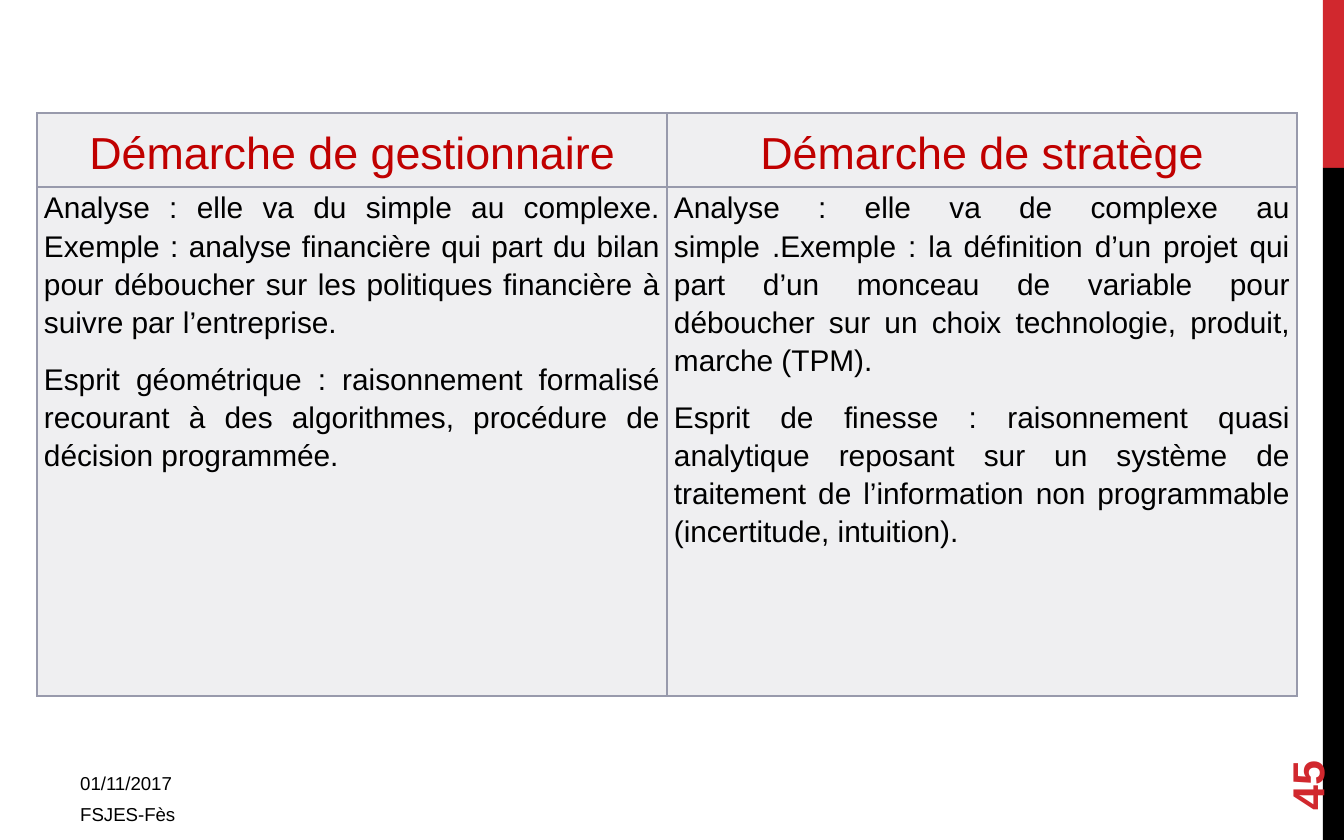
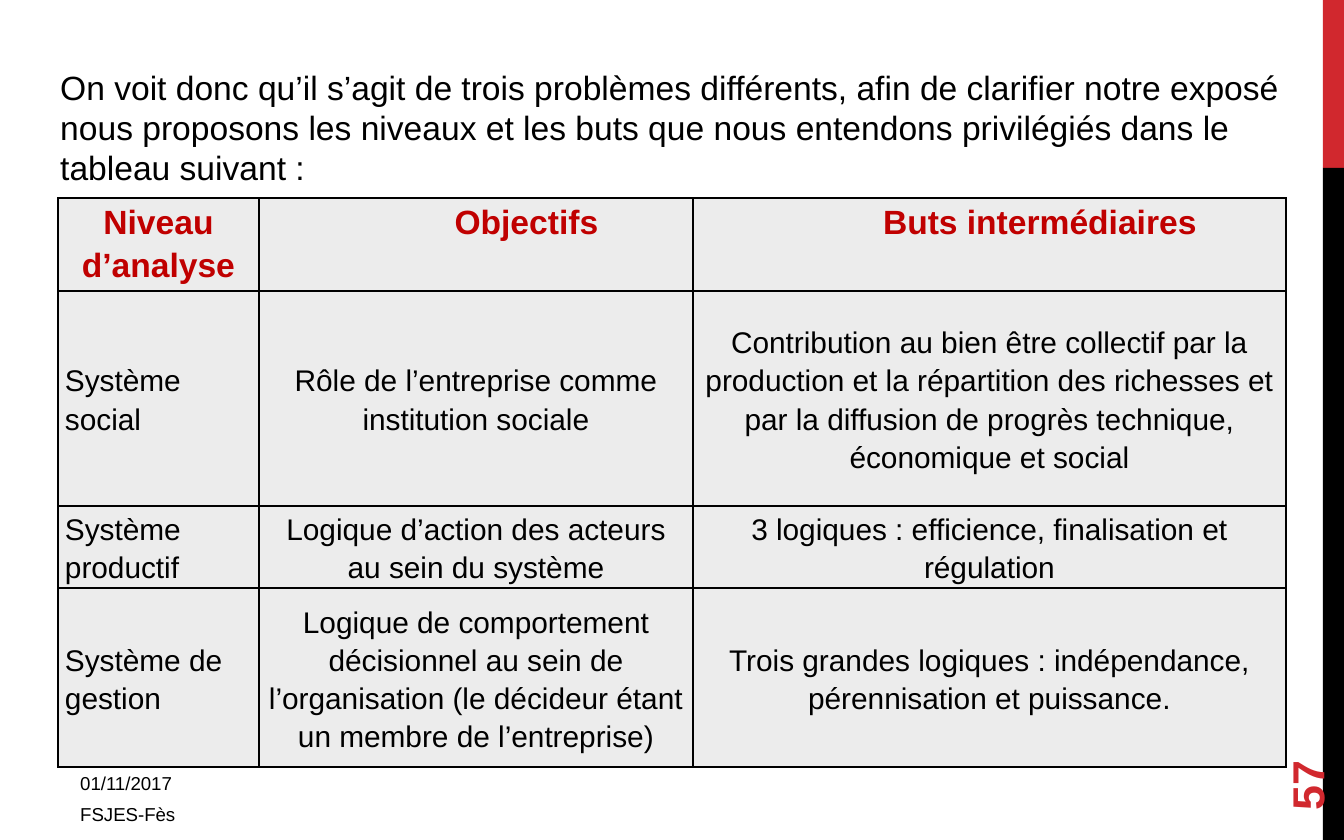
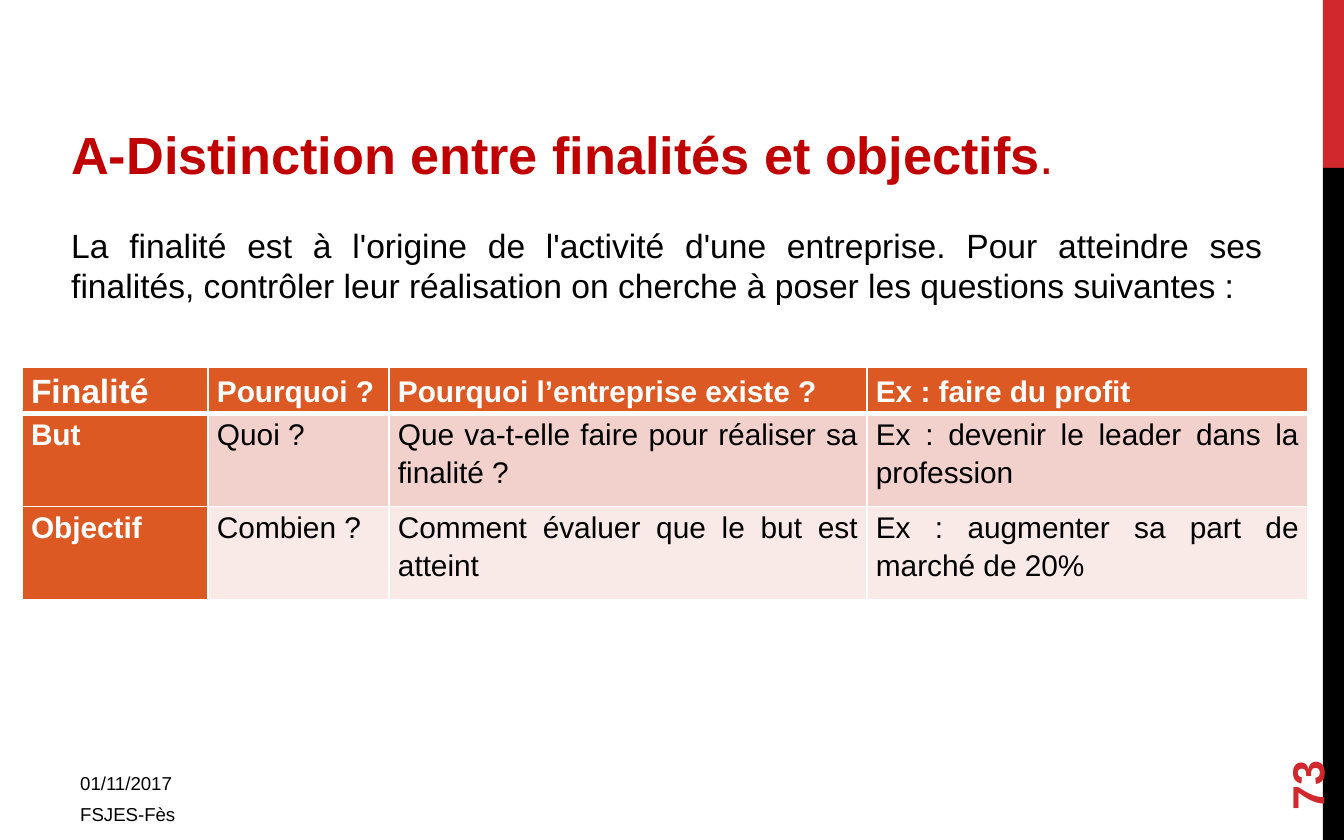
from dataclasses import dataclass, replace

from lxml import etree
from pptx import Presentation
from pptx.dml.color import RGBColor
from pptx.enum.shapes import MSO_SHAPE
from pptx.enum.text import MSO_ANCHOR, PP_ALIGN
from pptx.oxml.ns import qn
from pptx.util import Emu, Pt

RECT = MSO_SHAPE.RECTANGLE
LEFT, CENTER, JUSTIFY = PP_ALIGN.LEFT, PP_ALIGN.CENTER, PP_ALIGN.JUSTIFY
TOP, MIDDLE, BOTTOM = MSO_ANCHOR.TOP, MSO_ANCHOR.MIDDLE, MSO_ANCHOR.BOTTOM
PX_PER_INCH = 134.4
SLIDE_W, SLIDE_H = 1344, 840


@dataclass(frozen=True)
class Theme:
    """Colours, font and type sizes shared by the slides."""
    font: str = "Arial"
    black: str = "000000"
    white: str = "FFFFFF"
    red: str = "D1282E"
    heading: str = "C00000"
    orange: str = "DC5924"
    pink: str = "F2D1CD"
    pale_pink: str = "F9EAE8"
    pale_blue: str = "EFEFF1"
    blue_grey: str = "989AAC"
    grey: str = "ECECEC"
    footer: int = 10
    body: int = 16
    lead: int = 18
    large: int = 24
    title: int = 28


T = Theme()


@dataclass(frozen=True)
class Style:
    """Look of a piece of text."""
    size: int = T.body
    color: str = T.black
    bold: bool = False
    align: PP_ALIGN = LEFT
    anchor: MSO_ANCHOR = TOP
    spacing: float = 1.0
    after: int = 0
    indent: int = 0


CELL = Style(spacing=1.15)


def px(n):
    """Turn px into EMU."""
    return Emu(round(n * 914400 / PX_PER_INCH))


def rgb(color):
    """Return the colour of a hex string."""
    return RGBColor.from_string(color)


def format_paragraph(p, style):
    """Apply a style to a whole paragraph."""
    p.alignment = style.align
    p.line_spacing = style.spacing
    p.space_after = Pt(style.after)
    if style.indent:
        pPr = p._p.get_or_add_pPr()
        pPr.set("marL", "0")
        pPr.set("indent", str(px(style.indent)))
    f = p.font
    f.name, f.size, f.bold = T.font, Pt(style.size), style.bold
    f.color.rgb = rgb(style.color)


def write(tf, text, style):
    """Write one paragraph for each line of the text."""
    tf.word_wrap = True
    for i, line in enumerate(text.split("\n")):
        p = tf.add_paragraph() if i else tf.paragraphs[0]
        p.add_run().text = line
        format_paragraph(p, style)


def add_text(s, box, text, style):
    """Add a text box and return it."""
    sp = s.shapes.add_textbox(*map(px, box))
    sp.text_frame.vertical_anchor = style.anchor
    write(sp.text_frame, text, style)
    return sp


def add_band(s, box, color):
    """Add a plain filled rectangle."""
    sp = s.shapes.add_shape(RECT, *map(px, box))
    sp.shadow.inherit = False
    sp.fill.solid()
    sp.fill.fore_color.rgb = rgb(color)
    sp.line.fill.background()


def add_frame(s, number):
    """Add the side bands, date, footer and page number."""
    band_x, split = 1323, 168
    add_band(s, (band_x, 0, SLIDE_W - band_x, split), T.red)
    add_band(s, (band_x, split, SLIDE_W - band_x, SLIDE_H - split), T.black)
    small = Style(size=T.footer)
    date = add_text(s, (67, 757, 504, 37), "01/11/2017",
                    replace(small, anchor=BOTTOM))
    date.text_frame.margin_bottom = 0
    add_text(s, (67, 796, 504, 35), "FSJES-Fès", small)
    page = add_text(s, (1226, 716, 161, 54), str(number),
                    Style(T.large, T.red, True, anchor=MIDDLE))
    page.rotation = 270


def set_border(cell, side, color, width):
    """Draw one side (L, R, T or B) of a cell."""
    ln = etree.SubElement(cell._tc.get_or_add_tcPr(), qn(f"a:ln{side}"),
                          w=str(Pt(width)))
    fill = etree.SubElement(ln, qn("a:solidFill"))
    etree.SubElement(fill, qn("a:srgbClr"), val=color)


def add_grid(s, origin, widths, heights, texts, look, border, margin=7,
             header_rule=1):
    """Add a table; look(row, column) gives the style and fill of a cell."""
    box = (*origin, sum(widths), sum(heights))
    table = s.shapes.add_table(len(heights), len(widths),
                               *map(px, box)).table
    table.first_row = table.horz_banding = False
    for column, width in zip(table.columns, widths):
        column.width = px(width)
    for r, (row, height) in enumerate(zip(table.rows, heights)):
        row.height = px(height)
        for c, cell in enumerate(row.cells):
            style, fill = look(r, c)
            cell.margin_left = cell.margin_right = px(margin)
            cell.margin_top = cell.margin_bottom = 0
            cell.vertical_anchor = style.anchor
            for side in "LRTB":
                on_rule = (r, side) in ((0, "B"), (1, "T"))
                set_border(cell, side, border, header_rule if on_rule else 1)
            cell.fill.solid()
            cell.fill.fore_color.rgb = rgb(fill)
            write(cell.text_frame, texts[r][c], style)


def approaches_slide(s):
    """Compare the manager's and the strategist's approach."""
    head = replace(CELL, size=T.large, color=T.heading, align=CENTER,
                   anchor=MIDDLE, after=10)
    body = replace(CELL, align=JUSTIFY, after=10)
    texts = [
        ["Démarche de gestionnaire", "Démarche de stratège"],
        ["Analyse : elle va du simple au complexe. Exemple : analyse "
         "financière qui part du bilan pour déboucher sur les politiques "
         "financière à suivre par l’entreprise.\n"
         "Esprit géométrique : raisonnement formalisé recourant à des "
         "algorithmes, procédure de décision programmée.",
         "Analyse : elle va de complexe au simple .Exemple : la définition "
         "d’un projet qui part d’un monceau de variable pour déboucher sur "
         "un choix technologie, produit, marche (TPM).\n"
         "Esprit de finesse : raisonnement quasi analytique reposant sur un "
         "système de traitement de l’information non programmable "
         "(incertitude, intuition)."],
    ]
    add_grid(s, (37, 113), [630] * 2, [74, 509], texts,
             lambda r, c: (body if r else head, T.pale_blue), T.blue_grey)


def levels_slide(s):
    """Show the goals of each level of analysis."""
    add_text(s, (47, 60, 1270, 136),
             "On voit donc qu’il s’agit de trois problèmes différents, afin "
             "de clarifier notre exposé nous proposons les niveaux et les "
             "buts que nous entendons privilégiés dans le tableau suivant :",
             Style(size=T.lead))
    head = replace(CELL, size=T.lead, color=T.heading, bold=True,
                   align=CENTER)
    body = replace(CELL, anchor=MIDDLE)

    def look(r, c):
        """Indent the headings and centre the text beside the levels."""
        if r == 0:
            return replace(head, indent=101 if c else 0), T.grey
        return replace(body, align=CENTER if c else LEFT), T.grey

    texts = [
        ["Niveau d’analyse", "Objectifs", "Buts intermédiaires"],
        ["Système social", "Rôle de l’entreprise comme institution sociale",
         "Contribution au bien être collectif par la production et la "
         "répartition des richesses et par la diffusion de progrès "
         "technique, économique et social"],
        ["Système productif",
         "Logique d’action des acteurs au sein du système",
         "3 logiques : efficience, finalisation et régulation"],
        ["Système de gestion",
         "Logique de comportement décisionnel au sein de l’organisation "
         "(le décideur étant un membre de l’entreprise)",
         "Trois grandes logiques : indépendance, pérennisation et "
         "puissance."],
    ]
    add_grid(s, (58, 198), [201, 434, 593], [92, 215, 82, 179], texts, look,
             T.black)


def purposes_slide(s):
    """Tell purposes from objectives."""
    sp = add_text(s, (58, 116, 1218, 199),
                  "A-Distinction entre finalités et objectifs\n"
                  "La finalité est à l'origine de l'activité d'une "
                  "entreprise. Pour atteindre ses finalités, contrôler leur "
                  "réalisation on cherche à poser les questions suivantes :",
                  Style(size=T.lead, align=JUSTIFY))
    title = sp.text_frame.paragraphs[0]
    format_paragraph(title, Style(T.title, T.heading, True, JUSTIFY,
                                  after=21))
    stop = title.add_run()
    stop.text, stop.font.bold = ".", False
    body = replace(CELL, align=JUSTIFY)
    label = replace(body, color=T.white, bold=True)
    fills = [T.orange, T.pink, T.pale_pink]

    def look(r, c):
        """Set off the first row and column."""
        if r and c:
            return body, fills[r]
        if r:
            return label, T.orange
        if c:
            return replace(label, align=LEFT, anchor=MIDDLE), T.orange
        return replace(label, size=T.lead), T.orange

    texts = [
        ["Finalité", "Pourquoi ?", "Pourquoi l’entreprise existe ?",
         "Ex : faire du profit"],
        ["But", "Quoi ?", "Que va-t-elle faire pour réaliser sa finalité ?",
         "Ex : devenir le leader dans la profession"],
        ["Objectif", "Combien ?", "Comment évaluer que le but est atteint",
         "Ex : augmenter sa part de marché de 20%"],
    ]
    add_grid(s, (22, 367), [186, 181, 478, 441], [45, 93, 93], texts, look,
             T.white, margin=9, header_rule=3)


def main():
    """Build the three slides."""
    prs = Presentation()
    prs.slide_width, prs.slide_height = px(SLIDE_W), px(SLIDE_H)
    blank = prs.slide_layouts[6]
    pages = {45: approaches_slide, 57: levels_slide, 73: purposes_slide}
    for number, build in pages.items():
        s = prs.slides.add_slide(blank)
        add_frame(s, number)
        build(s)
    prs.save("out.pptx")


if __name__ == "__main__":
    main()
